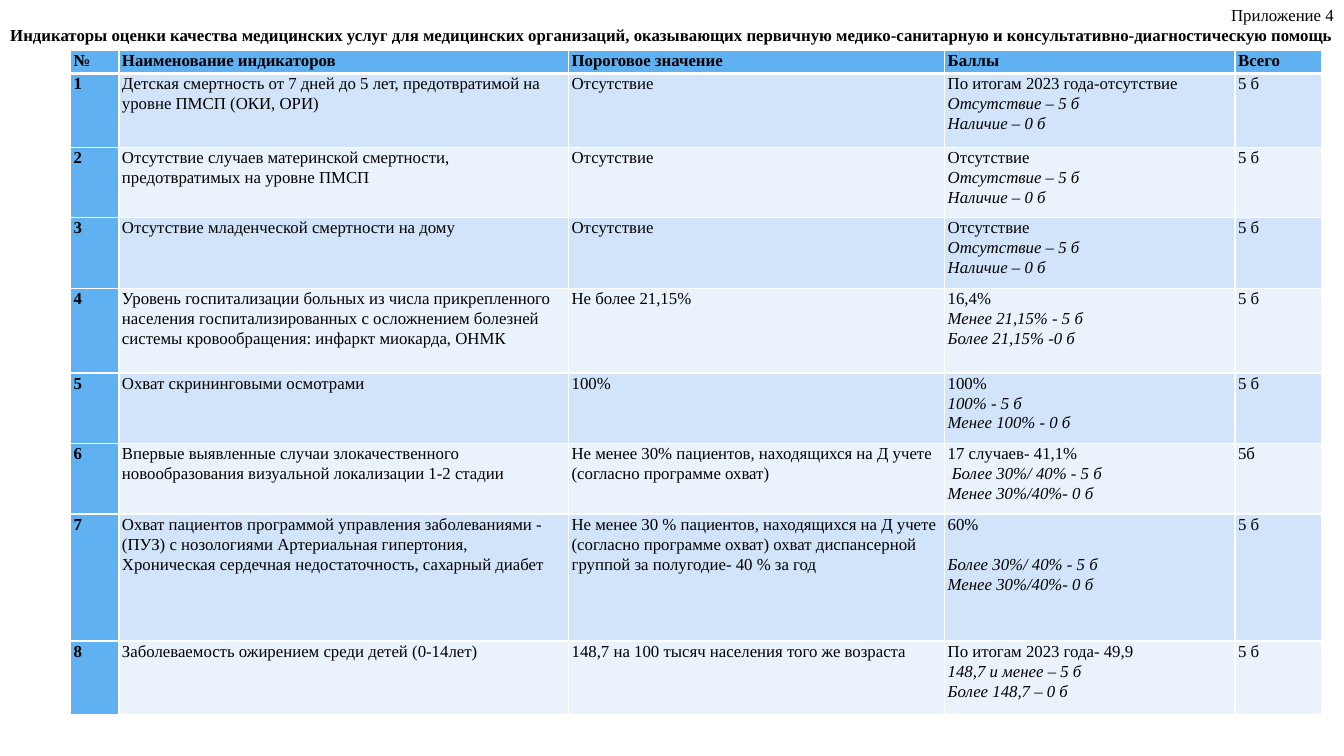
from lxml import etree
from pptx import Presentation
from pptx.dml import color
from pptx.enum import text
from pptx.oxml import ns
from pptx.util import Inches, Pt

HUES = {"head": "60B1F2", "odd": "D2E4FA", "even": "EAF2FC", "line": "FFFFFF", "ink": "000000"}
WIDTHS = [0.48, 4.46, 3.73, 2.88, 0.86]
HEIGHTS = [0.23, 0.73, 0.7, 0.7, 0.84, 0.7, 0.7, 1.26, 0.73]
HEADS = ["№", "Наименование индикаторов", "Пороговое значение", "Баллы", "Всего"]
ROWS = [
    ["Детская смертность от 7 дней до 5 лет, предотвратимой на уровне ПМСП (ОКИ, ОРИ)",
     "Отсутствие",
     ["По итогам 2023 года-отсутствие", "Отсутствие – 5 б", "Наличие – 0 б"], "5 б"],
    ["Отсутствие случаев материнской смертности, предотвратимых на уровне ПМСП",
     "Отсутствие",
     ["Отсутствие", "Отсутствие – 5 б", "Наличие – 0 б"], "5 б"],
    ["Отсутствие младенческой смертности на дому",
     "Отсутствие",
     ["Отсутствие", "Отсутствие – 5 б", "Наличие – 0 б"], "5 б"],
    ["Уровень госпитализации больных из числа прикрепленного населения госпитализированных "
     "с осложнением болезней системы кровообращения: инфаркт миокарда, ОНМК",
     "Не более 21,15%",
     ["16,4%", "Менее 21,15% - 5 б", "Более 21,15% -0 б"], "5 б"],
    ["Охват скрининговыми осмотрами",
     "100%",
     ["100%", "100% - 5 б", "Менее 100% - 0 б"], "5 б"],
    ["Впервые выявленные случаи злокачественного новообразования визуальной локализации 1-2 стадии",
     "Не менее 30% пациентов, находящихся на Д учете (согласно программе охват)",
     ["17 случаев- 41,1%", "Более 30%/ 40% - 5 б", "Менее 30%/40%- 0 б"], "5б"],
    ["Охват пациентов программой управления заболеваниями - (ПУЗ) с нозологиями "
     "Артериальная гипертония, Хроническая сердечная недостаточность, сахарный диабет",
     "Не менее 30 % пациентов, находящихся на Д учете (согласно программе охват) "
     "охват диспансерной группой за полугодие- 40 % за год",
     ["60%", "Более 30%/ 40% - 5 б", "Менее 30%/40%- 0 б"], "5 б"],
    ["Заболеваемость ожирением среди детей (0-14лет)",
     "148,7 на 100 тысяч населения того же возраста",
     ["По итогам 2023 года- 49,9", "148,7 и менее – 5 б", "Более 148,7 – 0 б"], "5 б"],
]


def write(para, words, bold=False, slant=False):
    run = para.add_run()
    run.text = words
    font = run.font
    font.name, font.size, font.bold, font.italic = "Times New Roman", Pt(12), bold, slant
    font.color.rgb = color.RGBColor.from_string(HUES["ink"])


def edge(cell, side, width):
    line = etree.SubElement(cell._tc.get_or_add_tcPr(), ns.qn("a:ln" + side), w=str(Pt(width)))
    fill = etree.SubElement(line, ns.qn("a:solidFill"))
    etree.SubElement(fill, ns.qn("a:srgbClr"), val=HUES["line"])


deck = Presentation()
deck.slide_width, deck.slide_height = Inches(13.33), Inches(7.5)
slide = deck.slides.add_slide(deck.slide_layouts[5])

title = slide.shapes.title
title.left, title.top, title.width, title.height = 0, 0, Inches(13.33), Inches(0.5)
frame = title.text_frame
frame.word_wrap = False
frame.auto_size = text.MSO_AUTO_SIZE.SHAPE_TO_FIT_TEXT
frame.vertical_anchor = text.MSO_ANCHOR.MIDDLE
note = frame.paragraphs[0]
note.alignment = text.PP_ALIGN.RIGHT
write(note, "Приложение 4")
name = frame.add_paragraph()
name.alignment = text.PP_ALIGN.CENTER
write(name, "Индикаторы оценки качества медицинских услуг для медицинских организаций, "
      "оказывающих первичную медико-санитарную и консультативно-диагностическую помощь", bold=True)

grid = slide.shapes.add_table(len(HEIGHTS), len(WIDTHS), Inches(0.7), Inches(0.5),
                              Inches(sum(WIDTHS)), Inches(sum(HEIGHTS))).table
for col, width in zip(grid.columns, WIDTHS):
    col.width = Inches(width)
for row, height in zip(grid.rows, HEIGHTS):
    row.height = Inches(height)

table = [HEADS] + [[str(num)] + row for num, row in enumerate(ROWS, 1)]
for r, row in enumerate(table):
    for c, value in enumerate(row):
        cell = grid.cell(r, c)
        cell.margin_left = cell.margin_right = Inches(0.03)
        cell.margin_top = cell.margin_bottom = 0
        head = r == 0 or c == 0
        for side in "LRTB":
            thick = (r, side) in [(0, "B"), (1, "T")]
            edge(cell, side, 3 if thick else 1)
        cell.fill.solid()
        hue = "head" if head else "odd" if r % 2 else "even"
        cell.fill.fore_color.rgb = color.RGBColor.from_string(HUES[hue])
        lines = value if isinstance(value, list) else [value]
        for n, words in enumerate(lines):
            para = cell.text_frame.paragraphs[0] if n == 0 else cell.text_frame.add_paragraph()
            para.line_spacing = 1.07
            write(para, words, bold=head, slant=n > 0)

grid.cell(6, 3).text_frame.paragraphs[1]._p.get_or_add_pPr().set("marL", str(Inches(0.04)))
grid.cell(7, 3).text_frame.paragraphs[1].space_before = Pt(14.3)

deck.save("out.pptx")
